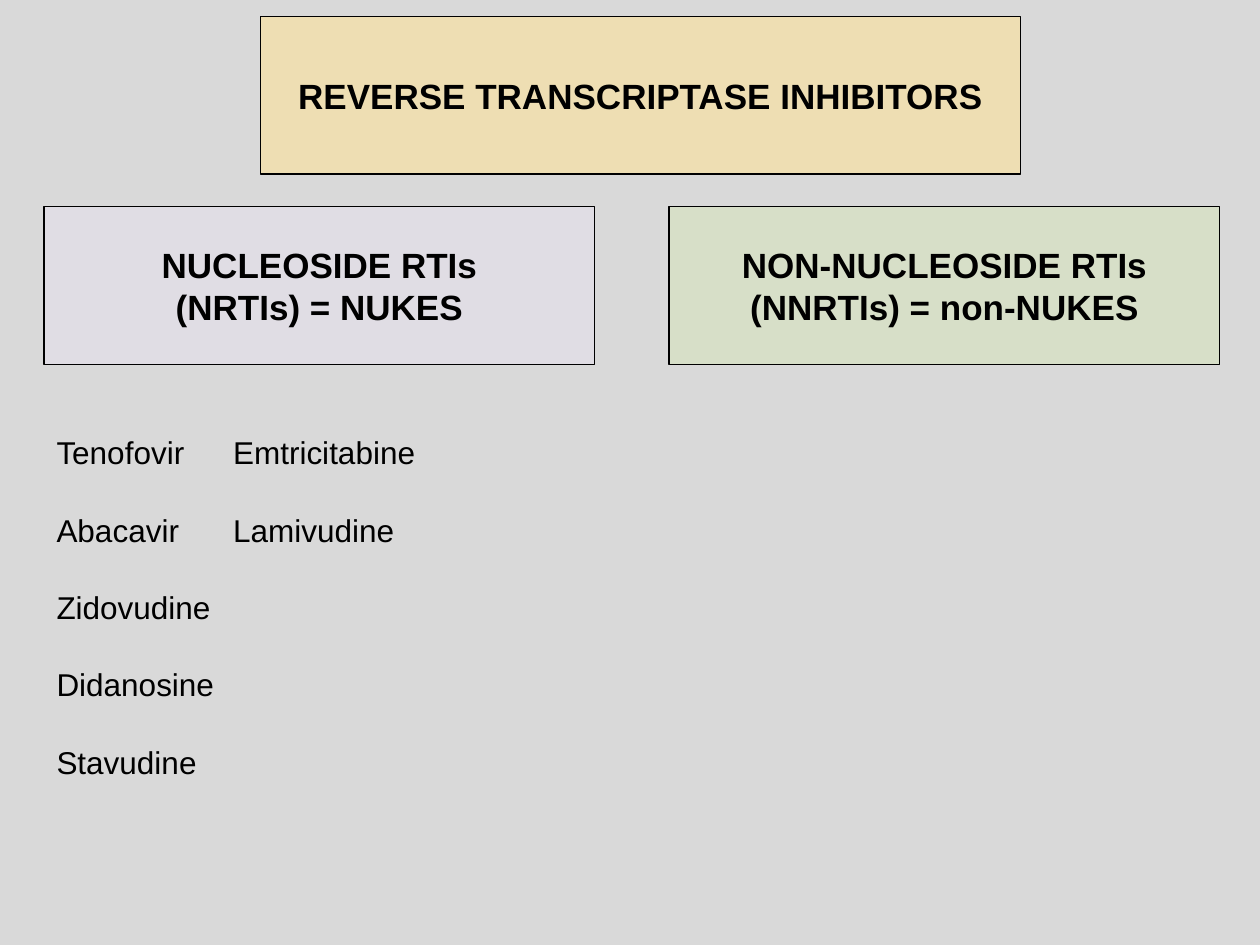
from lxml import etree
from pptx import Presentation
from pptx.dml.color import RGBColor
from pptx.enum import shapes, text
from pptx.oxml.ns import qn
from pptx.util import Cm, Pt

BLACK = "000000"
HEADING_HEIGHT = 3.18
CLASS_TOP, CLASS_WIDTH = 4.17, 11.1
DRUG_TOP, DRUG_PITCH, DRUG_HEIGHT = 8.61, 1.56, 1.02

# Left edge of each drug column, then its names with their box widths
DRUG_COLUMNS = [
    (0.89, [("Tenofovir", 3.12), ("Abacavir", 3.05), ("Zidovudine", 3.66),
            ("Didanosine", 3.73), ("Stavudine", 3.35)]),
    (4.45, [("Emtricitabine", 4.22), ("Lamivudine", 3.78)]),
]


def paint(color_format, color):
    color_format.rgb = RGBColor.from_string(color)


def write(frame, lines, alignment, **font_values):
    for index, line in enumerate(lines):
        paragraph = frame.paragraphs[0] if index == 0 else frame.add_paragraph()
        paragraph.alignment = alignment
        run = paragraph.add_run()
        run.text = line
        for name, value in {"name": "Arial", **font_values}.items():
            setattr(run.font, name, value)
        paint(run.font.color, BLACK)


def add_heading(slide, left, top, width, color, lines):
    shape = slide.shapes.add_shape(
        shapes.MSO_SHAPE.RECTANGLE, Cm(left), Cm(top), Cm(width), Cm(HEADING_HEIGHT))
    shape.shadow.inherit = False
    shape.fill.solid()
    paint(shape.fill.fore_color, color)
    # 60 % opaque fill
    fill_color = shape.fill._xPr.find(qn("a:solidFill"))[0]
    etree.SubElement(fill_color, qn("a:alpha"), val="60000")
    paint(shape.line.color, BLACK)
    shape.line.width = Pt(0.75)
    frame = shape.text_frame
    frame.word_wrap = True
    frame.vertical_anchor = text.MSO_ANCHOR.MIDDLE
    write(frame, lines, text.PP_ALIGN.CENTER, size=Pt(20), bold=True)


def add_drug(slide, left, top, width, name):
    box = slide.shapes.add_textbox(Cm(left), Cm(top), Cm(width), Cm(DRUG_HEIGHT))
    frame = box.text_frame
    frame.word_wrap = False
    frame.auto_size = text.MSO_AUTO_SIZE.SHAPE_TO_FIT_TEXT
    write(frame, [name], text.PP_ALIGN.LEFT, size=Pt(18))


def main():
    presentation = Presentation()
    presentation.slide_width, presentation.slide_height = Cm(25.4), Cm(19.05)
    slide = presentation.slides.add_slide(presentation.slide_layouts[6])
    background = slide.background.fill
    background.solid()
    paint(background.fore_color, "D9D9D9")

    # Title and the two drug classes
    add_heading(slide, 5.25, 0.33, 15.32, "FDE29B", ["REVERSE TRANSCRIPTASE INHIBITORS"])
    add_heading(slide, 0.89, CLASS_TOP, CLASS_WIDTH, "E6E0EC",
                ["NUCLEOSIDE RTIs", "(NRTIs) = NUKES"])
    add_heading(slide, 13.49, CLASS_TOP, CLASS_WIDTH, "D7E4BD",
                ["NON-NUCLEOSIDE RTIs", "(NNRTIs) = non-NUKES"])

    # Drug names in evenly spaced rows
    for left, drugs in DRUG_COLUMNS:
        for row, (name, width) in enumerate(drugs):
            add_drug(slide, left, DRUG_TOP + row * DRUG_PITCH, width, name)

    presentation.save("out.pptx")


if __name__ == "__main__":
    main()
